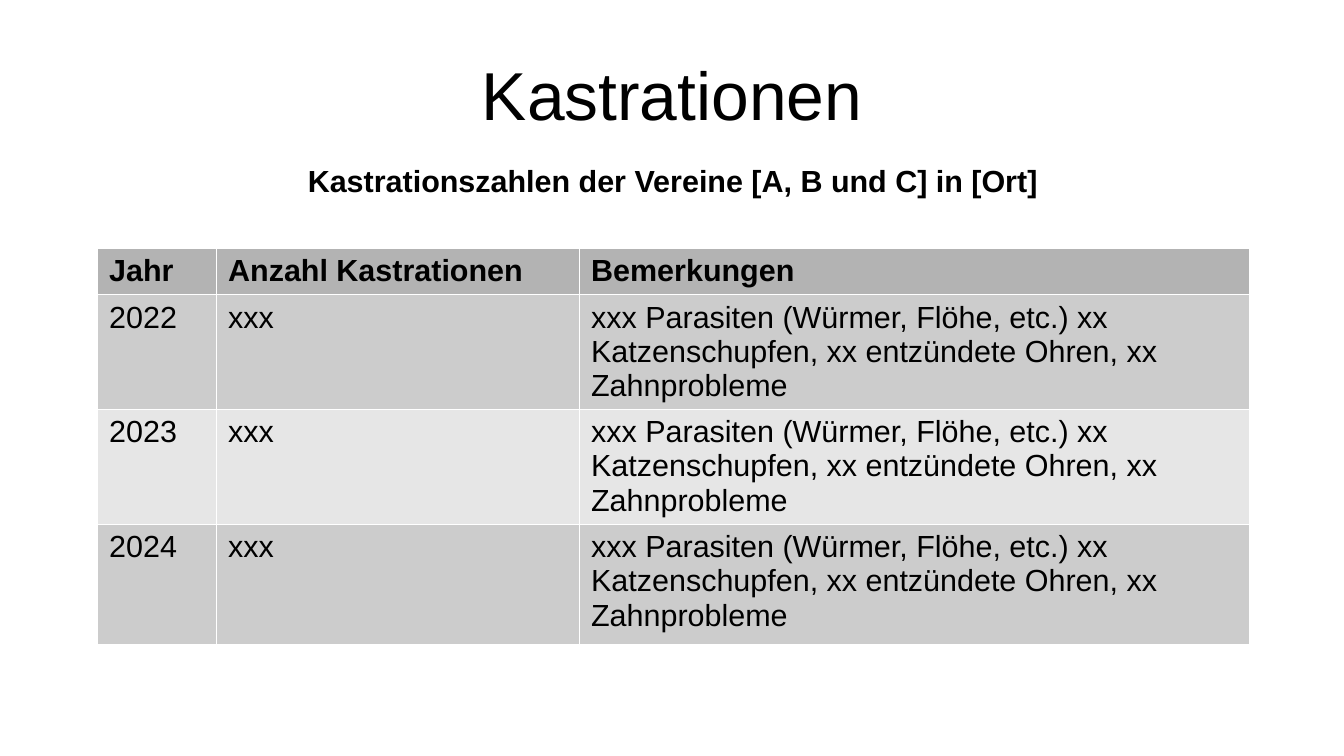
from dataclasses import dataclass
from itertools import cycle

from lxml import etree
from pptx import Presentation
from pptx import util as u
from pptx.dml.color import RGBColor
from pptx.enum import text
from pptx.oxml import ns


@dataclass(frozen=True)
class Theme:
    font: str = "Arial"
    ink: str = "000000"
    border: str = "FFFFFF"
    header: str = "B3B3B3"
    bands: tuple = ("CCCCCC", "E6E6E6")
    title: int = 40
    body: int = 18
    border_width: int = 762


THEME = Theme()
PX = u.Inches(1) / 122
REMARK = ("xxx Parasiten (Würmer, Flöhe, etc.) xx Katzenschupfen, "
          "xx entzündete Ohren, xx Zahnprobleme")
HEADER = ("Jahr", "Anzahl Kastrationen", "Bemerkungen")
ROWS = [(year, "xxx", REMARK) for year in ("2022", "2023", "2024")]
COLUMN_WIDTHS = (119, 363, 670)
ROW_HEIGHTS = (46, 114, 115, 120)


def px(n):
    return u.Emu(round(n * PX))


def write(tf, words, size, bold=False, align=text.PP_ALIGN.LEFT):
    p = tf.paragraphs[0]
    p.alignment = align
    r = p.add_run()
    r.text = words
    style = {"name": THEME.font, "size": u.Pt(size), "bold": bold}
    for key, value in style.items():
        setattr(r.font, key, value)
    r.font.color.rgb = RGBColor.from_string(THEME.ink)


def add_title(s, box, words):
    sp = s.shapes.title
    for key, value in zip(("left", "top", "width", "height"), box):
        setattr(sp, key, px(value))
    tf = sp.text_frame
    frame = {"margin_left": 0, "margin_top": 0, "margin_right": 0,
             "margin_bottom": 0, "auto_size": text.MSO_AUTO_SIZE.NONE,
             "vertical_anchor": text.MSO_ANCHOR.MIDDLE}
    for key, value in frame.items():
        setattr(tf, key, value)
    write(tf, words, THEME.title, align=text.PP_ALIGN.CENTER)


def add_subtitle(s, box, words):
    tf = s.shapes.add_textbox(*map(px, box)).text_frame
    tf.word_wrap = True
    write(tf, words, THEME.body, True, text.PP_ALIGN.CENTER)


def add_borders(cell):
    tc_pr = cell._tc.get_or_add_tcPr()
    for side in ("a:lnL", "a:lnR", "a:lnT", "a:lnB"):
        ln = etree.SubElement(tc_pr, ns.qn(side), w=str(THEME.border_width))
        fill = etree.SubElement(ln, ns.qn("a:solidFill"))
        etree.SubElement(fill, ns.qn("a:srgbClr"), val=THEME.border)


def fill_row(cells, words, color, bold=False):
    for cell, word in zip(cells, words):
        add_borders(cell)
        cell.fill.solid()
        cell.fill.fore_color.rgb = RGBColor.from_string(color)
        write(cell.text_frame, word, THEME.body, bold)


def add_figures(s, box):
    table = s.shapes.add_table(
        len(ROW_HEIGHTS), len(COLUMN_WIDTHS), *map(px, box)).table
    for column, width in zip(table.columns, COLUMN_WIDTHS):
        column.width = px(width)
    for row, height in zip(table.rows, ROW_HEIGHTS):
        row.height = px(height)
    header, *body = table.rows
    fill_row(header.cells, HEADER, THEME.header, True)
    for row, words, color in zip(body, ROWS, cycle(THEME.bands)):
        fill_row(row.cells, words, color)


def main():
    prs = Presentation()
    prs.slide_width, prs.slide_height = px(1344), px(756)
    s = prs.slides.add_slide(prs.slide_layouts[5])
    left, width = 97, sum(COLUMN_WIDTHS)
    add_title(s, (67, 30, 1210, 126), "Kastrationen")
    add_figures(s, (left, 248, width, sum(ROW_HEIGHTS)))
    add_subtitle(s, (left, 156, width, 46),
                 "Kastrationszahlen der Vereine [A, B und C] in [Ort]")
    prs.save("out.pptx")


if __name__ == "__main__":
    main()
